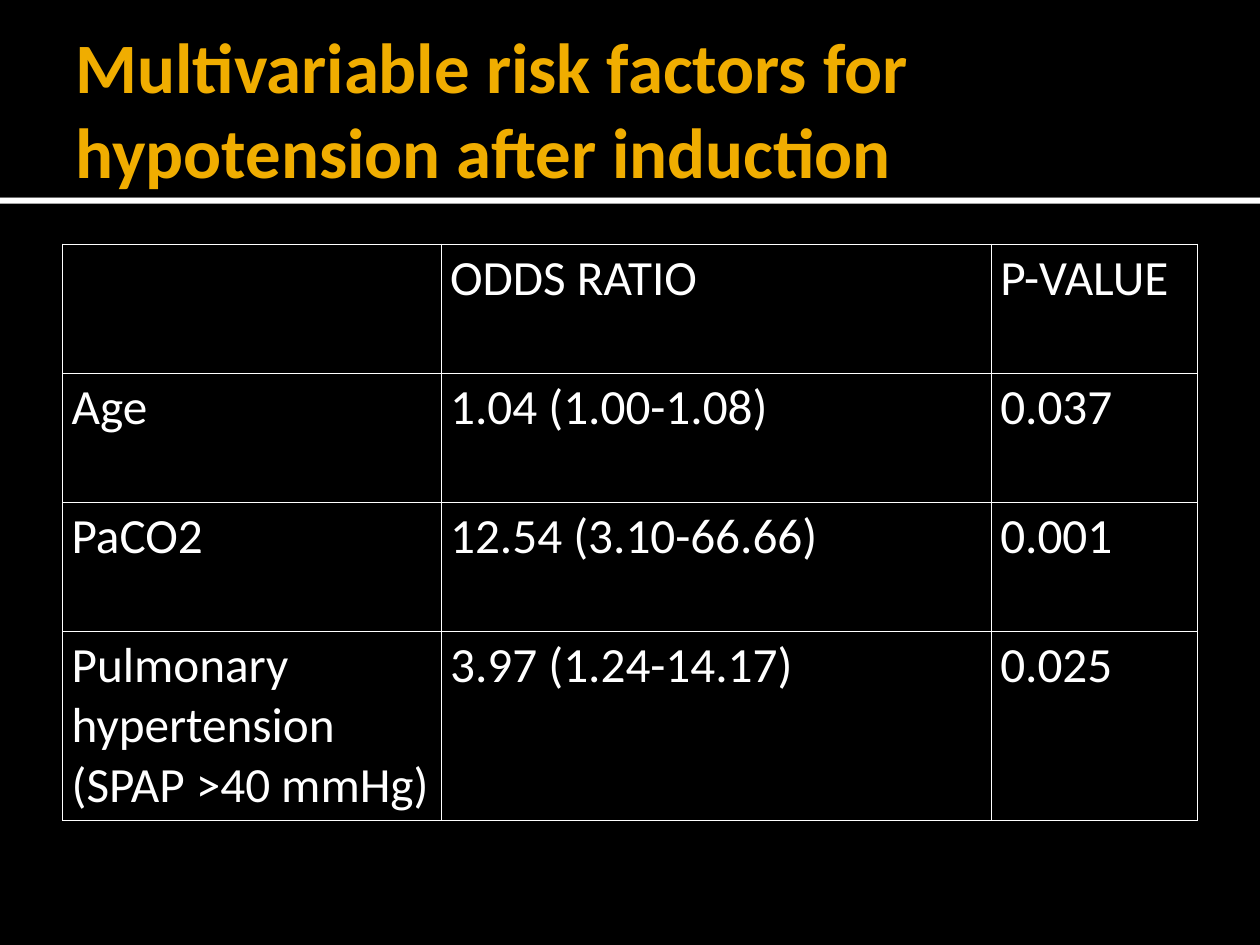
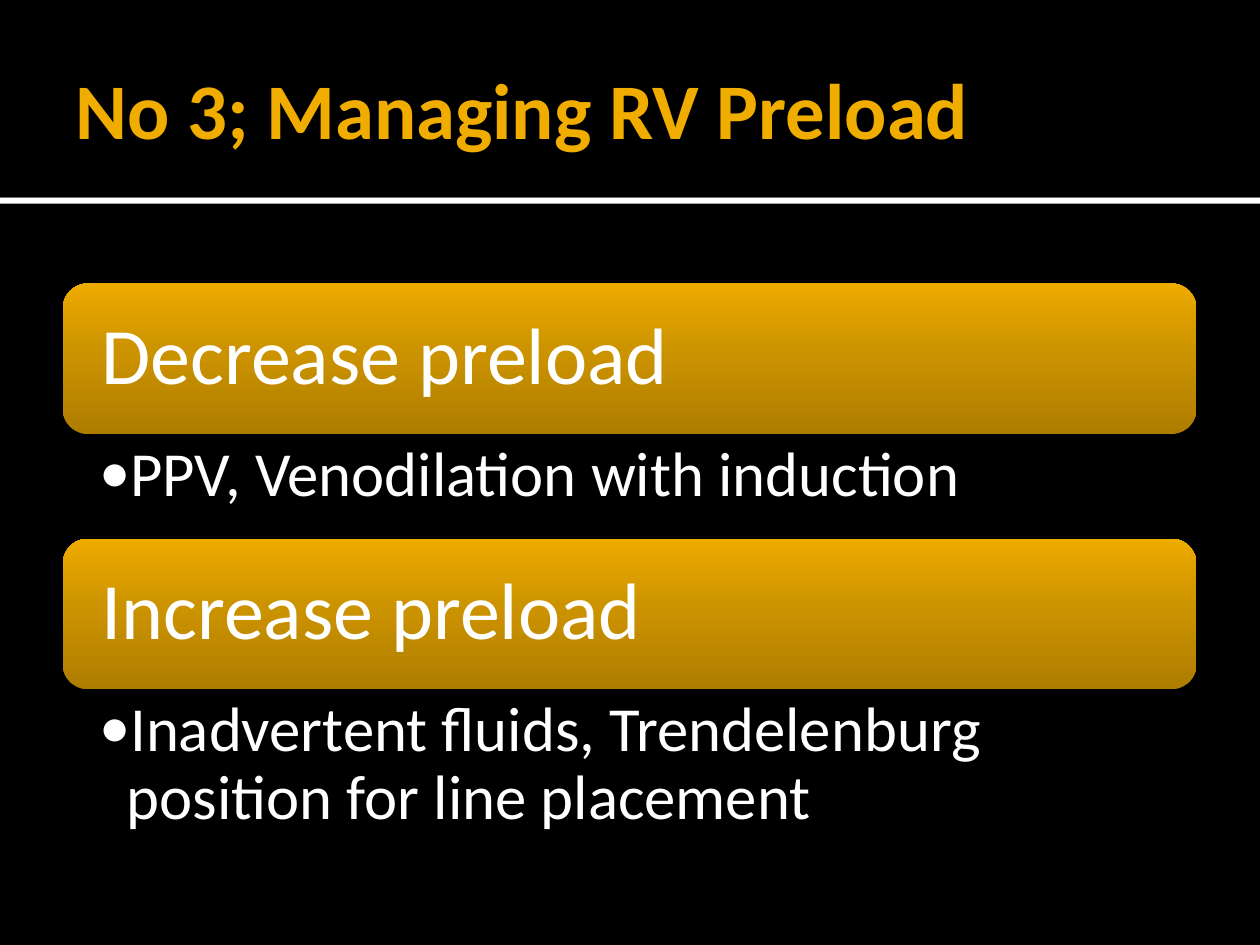
from copy import deepcopy

from lxml import etree
from pptx import Presentation
from pptx import util as u
from pptx.dml.color import RGBColor
from pptx.enum import shapes, text
from pptx.oxml import ns

BLACK = RGBColor(0x00, 0x00, 0x00)
WHITE = RGBColor(0xFF, 0xFF, 0xFF)
AMBER = RGBColor(0xF0, 0xAD, 0x00)
CARD_STOPS = [
    (0, RGBColor(0xAE, 0x7D, 0x00)),
    (0.55, RGBColor(0xCC, 0x93, 0x00)),
    (1, RGBColor(0xEE, 0xAB, 0x00)),
]
FONT = "Calibri"
PAGE_WIDTH, PAGE_HEIGHT = 36.12, 27.1
MARGIN, CONTENT_WIDTH = 1.8, 32.5
HEADER_HEIGHT, RULE_HEIGHT = 5.66, 0.18
CARD_HEIGHT = 4.32


def write(frame, content, size, color=WHITE, bold=False, spacing=1.0,
          insets=(0.25, 0.13, 0.25, 0.13), anchor=text.MSO_ANCHOR.TOP, bullet_indent=None):
    frame.word_wrap = True
    frame.vertical_anchor = anchor
    frame.margin_left, frame.margin_top, frame.margin_right, frame.margin_bottom = map(u.Cm, insets)
    para = frame.paragraphs[0]
    para.alignment = text.PP_ALIGN.LEFT
    para.line_spacing = spacing
    if bullet_indent:
        properties = para._p.get_or_add_pPr()
        properties.set("marL", str(u.Cm(bullet_indent)))
        properties.set("indent", str(-u.Cm(bullet_indent)))
        etree.SubElement(properties, ns.qn("a:buFont"), typeface=FONT)
        etree.SubElement(properties, ns.qn("a:buChar"), char="•")
    span = para.add_run()
    span.text = content
    span.font.name = FONT
    span.font.size = u.Pt(size)
    span.font.bold = bold
    span.font.color.rgb = color


class Deck:
    def __init__(self):
        self.deck = Presentation()
        self.deck.slide_width = u.Cm(PAGE_WIDTH)
        self.deck.slide_height = u.Cm(PAGE_HEIGHT)
        self.page = None

    def add_page(self, title, size):
        self.page = self.deck.slides.add_slide(self.deck.slide_layouts[6])
        background = self.page.background.fill
        background.solid()
        background.fore_color.rgb = BLACK
        self.band(HEADER_HEIGHT, RULE_HEIGHT, WHITE)
        self.band(0, HEADER_HEIGHT, BLACK)
        self.text_box(0.61, 4.95, title, size=size, color=AMBER, bold=True,
                      insets=(0.36, 0.18, 0.18, 0.18), anchor=text.MSO_ANCHOR.MIDDLE)

    def shape(self, kind, left, top, width, height):
        box = self.page.shapes.add_shape(kind, *map(u.Cm, (left, top, width, height)))
        box.shadow.inherit = False
        box.line.fill.background()
        return box

    def band(self, top, height, color):
        box = self.shape(shapes.MSO_SHAPE.RECTANGLE, 0, top, PAGE_WIDTH, height)
        box.fill.solid()
        box.fill.fore_color.rgb = color

    def text_box(self, top, height, content, **style):
        box = self.page.shapes.add_textbox(*map(u.Cm, (MARGIN, top, CONTENT_WIDTH, height)))
        write(box.text_frame, content, **style)

    def card(self, top, content):
        box = self.shape(shapes.MSO_SHAPE.ROUNDED_RECTANGLE, MARGIN, top, CONTENT_WIDTH, CARD_HEIGHT)
        box.fill.gradient()
        box.fill.gradient_angle = 90
        stop_list = box._element.spPr.find(".//" + ns.qn("a:gsLst"))
        stop_list.append(deepcopy(stop_list[0]))
        for stop, (position, color) in zip(box.fill.gradient_stops, CARD_STOPS):
            stop.position = position
            stop.color.rgb = color
        write(box.text_frame, content, size=65, spacing=0.9, insets=(0.9, 0.9, 0.9, 0.9),
              anchor=text.MSO_ANCHOR.MIDDLE)

    def bullet(self, top, height, content):
        self.text_box(top, height, content, size=51, spacing=0.9,
                      insets=(1.04, 0.23, 1.3, 0.23), bullet_indent=0.79)

    def table(self, top, widths, heights, rows):
        frame = self.page.shapes.add_table(
            len(rows), len(widths),
            *map(u.Cm, (MARGIN, top, sum(widths), sum(heights))))
        grid = frame.table
        grid.first_row = grid.horz_banding = False
        for column, width in zip(grid.columns, widths):
            column.width = u.Cm(width)
        for row, height, values in zip(grid.rows, heights, rows):
            row.height = u.Cm(height)
            for cell, value in zip(row.cells, values):
                self.outline(cell)
                cell.fill.background()
                if value:
                    write(cell.text_frame, value, size=40)

    def outline(self, cell):
        properties = cell._tc.get_or_add_tcPr()
        for side in ("lnL", "lnR", "lnT", "lnB"):
            line = etree.SubElement(properties, ns.qn("a:" + side), w=str(u.Pt(1)))
            fill = etree.SubElement(line, ns.qn("a:solidFill"))
            etree.SubElement(fill, ns.qn("a:srgbClr"), val=str(WHITE))


def main():
    show = Deck()

    show.add_page("Multivariable risk factors for hypotension after induction", 57.6)
    show.table(7, (10.85, 15.77, 5.92), (3.7, 3.7, 3.7, 5.42), [
        ("", "ODDS RATIO", "P-VALUE"),
        ("Age", "1.04 (1.00-1.08)", "0.037"),
        ("PaCO2", "12.54 (3.10-66.66)", "0.001"),
        ("Pulmonary hypertension (SPAP >40 mmHg)", "3.97 (1.24-14.17)", "0.025"),
    ])

    show.add_page("No 3; Managing RV Preload", 64)
    top = 8.13
    for heading, detail, detail_height in (
        ("Decrease preload", "PPV, Venodilation with induction", 3),
        ("Increase preload", "Inadvertent fluids, Trendelenburg position for line placement", 4.4),
    ):
        show.card(top, heading)
        show.bullet(top + CARD_HEIGHT, detail_height, detail)
        top += CARD_HEIGHT + detail_height

    show.deck.save("out.pptx")


if __name__ == "__main__":
    main()
